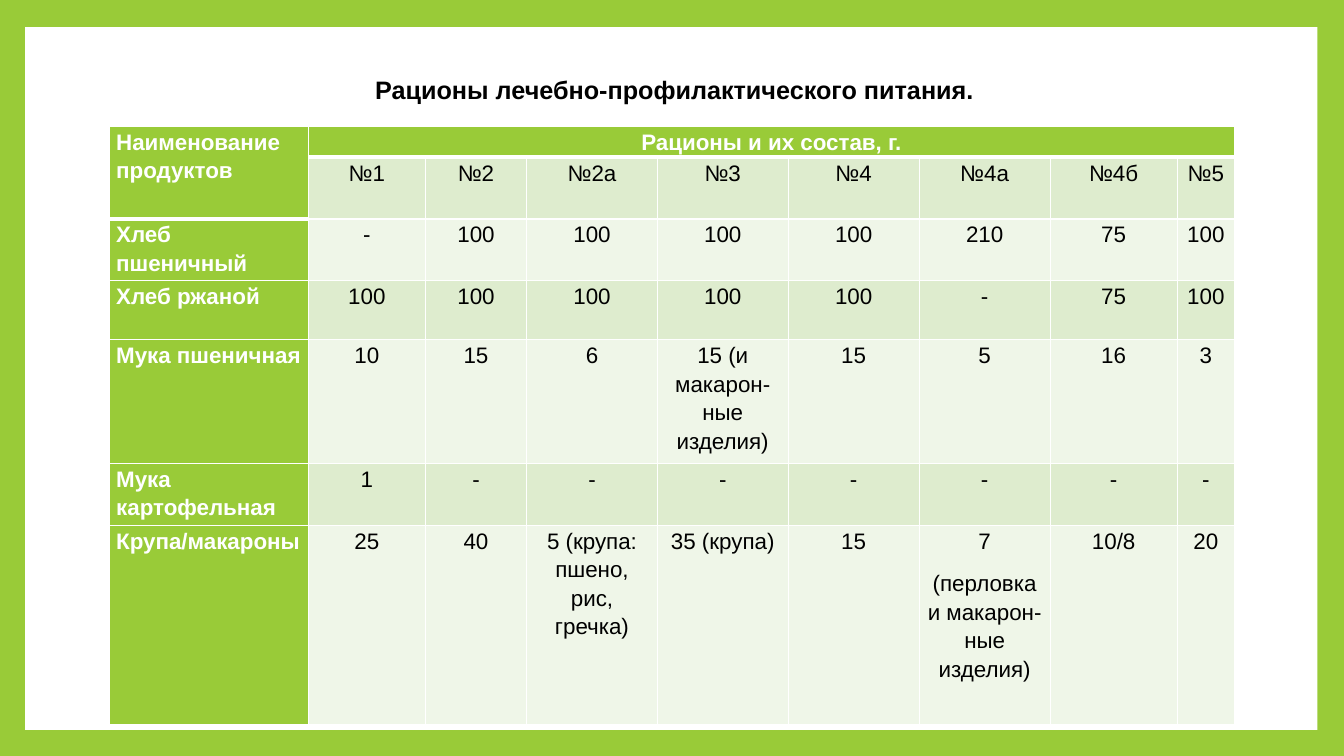
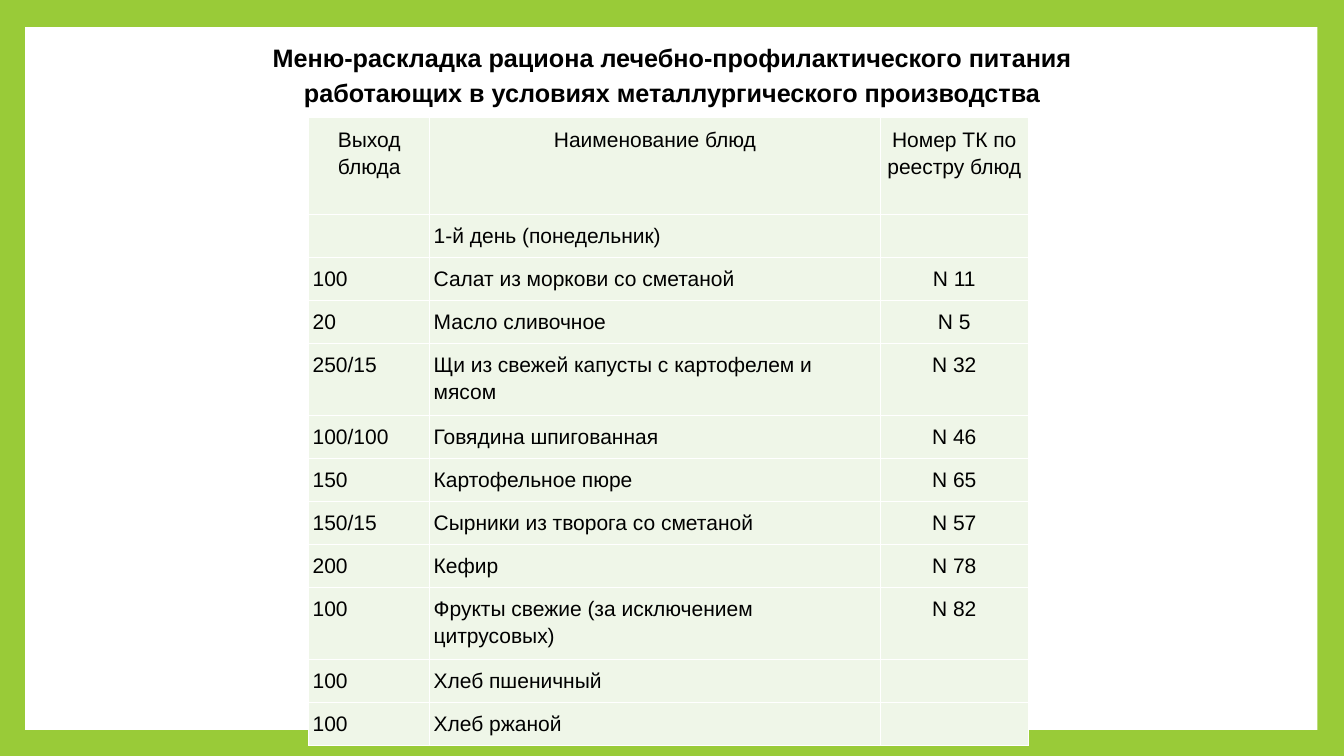
from dataclasses import dataclass

from lxml import etree
from pptx import Presentation
from pptx.dml.color import RGBColor
from pptx.enum import shapes, text
from pptx.oxml import ns
from pptx.util import Pt

GREEN = RGBColor(0x99, 0xCB, 0x38)
MID = RGBColor(0xDE, 0xEC, 0xCE)
PALE = RGBColor(0xEF, 0xF6, 0xE8)
WHITE = RGBColor(0xFF, 0xFF, 0xFF)
BLACK = RGBColor(0, 0, 0)
FONT = "Arial"
LEAD = 1.15


@dataclass
class Title:
    words: str
    left: float
    top: float
    high: float
    lead: float
    mode: text.MSO_ANCHOR


@dataclass
class Grid:
    left: float
    top: float
    cols: list[float]
    rows: list[float]
    cells: list[list[str]]
    size: float
    pad: tuple[float, float]
    lefts: int
    keyed: bool


DIET = Grid(
    77.8, 90.2,
    [142.5, 83.5, 72.4, 93.4, 93.4, 93.6, 93.6, 90.7, 41],
    [20.4, 42.2, 42.2, 42.2, 85.6, 42.2, 142.4],
    [
        ["Наименование продуктов", "Рационы и их состав, г."] + [""] * 7,
        ["", "№1", "№2", "№2а", "№3", "№4", "№4а", "№4б", "№5"],
        ["Хлеб пшеничный", "-", "100", "100", "100", "100", "210", "75", "100"],
        ["Хлеб ржаной", "100", "100", "100", "100", "100", "-", "75", "100"],
        ["Мука пшеничная", "10", "15", "6", "15 (и макарон-ные изделия)",
         "15", "5", "16", "3"],
        ["Мука картофельная", "1"] + ["-"] * 7,
        ["Крупа/макароны", "25", "40", "5 (крупа: пшено, рис, гречка)",
         "35 (крупа)", "15", "7\n(перловка и макарон-ные изделия)",
         "10/8", "20"],
    ],
    16, (5.2, 0), 1, True,
)

ONE, TWO = 29.1, 48.5
MENU = Grid(
    220.5, 84.2,
    [86.5, 321.8, 105.7],
    [69] + [ONE] * 3 + [TWO] + [ONE] * 4 + [TWO] + [ONE] * 2,
    [
        ["Выход блюда", "Наименование блюд", "Номер ТК по реестру блюд"],
        ["", "1-й день (понедельник)", ""],
        ["100", "Салат из моркови со сметаной", "N 11"],
        ["20", "Масло сливочное", "N 5"],
        ["250/15", "Щи из свежей капусты с картофелем и мясом", "N 32"],
        ["100/100", "Говядина шпигованная", "N 46"],
        ["150", "Картофельное пюре", "N 65"],
        ["150/15", "Сырники из творога со сметаной", "N 57"],
        ["200", "Кефир", "N 78"],
        ["100", "Фрукты свежие (за исключением цитрусовых)", "N 82"],
        ["100", "Хлеб пшеничный", ""],
        ["100", "Хлеб ржаной", ""],
    ],
    15, (2.8, 5), 2, False,
)

PAGES = [
    (Title("Рационы лечебно-профилактического питания.",
           93, 52, 38, 0.9, text.MSO_ANCHOR.TOP), DIET),
    (Title("Меню-раскладка рациона лечебно-профилактического питания\v"
           "работающих в условиях металлургического производства",
           91.4, -1.4, 106.6, LEAD, text.MSO_ANCHOR.MIDDLE), MENU),
]


def style(frame, size: float, color: RGBColor, bold: bool,
          mid: bool, lead: float) -> None:
    for para in frame.paragraphs:
        para.alignment = text.PP_ALIGN.CENTER if mid else text.PP_ALIGN.LEFT
        para.line_spacing = lead
        para.space_after = Pt(10)
        for run in para.runs:
            font = run.font
            font.name, font.size, font.bold = FONT, Pt(size), bold
            font.color.rgb = color


def edge(cell, base: float) -> None:
    props = cell._tc.get_or_add_tcPr()
    sides = {"lnL": 1, "lnR": 1, "lnT": 1, "lnB": base}
    for spot, (side, width) in enumerate(sides.items()):
        line = etree.Element(ns.qn(f"a:{side}"), w=str(Pt(width)))
        fill = etree.SubElement(line, ns.qn("a:solidFill"))
        etree.SubElement(fill, ns.qn("a:srgbClr"), val=str(WHITE))
        props.insert(spot, line)


def panel(slide) -> None:
    box = slide.shapes.add_shape(shapes.MSO_SHAPE.RECTANGLE,
                                 Pt(18), Pt(19.4), Pt(923), Pt(502))
    box.shadow.inherit = False
    box.fill.solid()
    box.fill.fore_color.rgb = WHITE
    box.line.fill.background()


def head(slide, item: Title) -> None:
    box = slide.shapes.add_textbox(Pt(item.left), Pt(item.top),
                                   Pt(777.6), Pt(item.high))
    frame = box.text_frame
    frame.word_wrap = True
    frame.vertical_anchor = item.mode
    frame.paragraphs[0].text = item.words
    style(frame, 18, BLACK, True, True, item.lead)


def draw(slide, grid: Grid) -> None:
    table = slide.shapes.add_table(
        len(grid.rows), len(grid.cols), Pt(grid.left), Pt(grid.top),
        Pt(sum(grid.cols)), Pt(sum(grid.rows))).table
    table.first_row = table.horz_banding = False
    for col, wide in zip(table.columns, grid.cols):
        col.width = Pt(wide)
    for r, (row, high) in enumerate(zip(table.rows, grid.rows)):
        row.height = Pt(high)
        for c, words in enumerate(grid.cells[r]):
            cell = table.cell(r, c)
            key = grid.keyed and (r == 0 or c == 0)
            band = MID if grid.keyed and r % 2 else PALE
            cell.fill.solid()
            cell.fill.fore_color.rgb = GREEN if key else band
            edge(cell, 3 if grid.keyed and r == 0 else 1)
            side, rise = grid.pad if words else (0, 0)
            cell.margin_left = cell.margin_right = Pt(side)
            cell.margin_top = cell.margin_bottom = Pt(rise)
            cell.text_frame.text = words
            mid = c >= grid.lefts or (r == 0 and not grid.keyed)
            style(cell.text_frame, grid.size, WHITE if key else BLACK,
                  key, mid, LEAD)
    if grid.keyed:
        table.cell(0, 0).merge(table.cell(1, 0))
        table.cell(0, 1).merge(table.cell(0, len(grid.cols) - 1))


def main() -> None:
    deck = Presentation()
    deck.slide_width, deck.slide_height = Pt(960), Pt(540)
    back = deck.slide_master.background.fill
    back.solid()
    back.fore_color.rgb = GREEN
    for title, grid in PAGES:
        slide = deck.slides.add_slide(deck.slide_layouts[6])
        panel(slide)
        head(slide, title)
        draw(slide, grid)
    deck.save("out.pptx")


if __name__ == "__main__":
    main()
